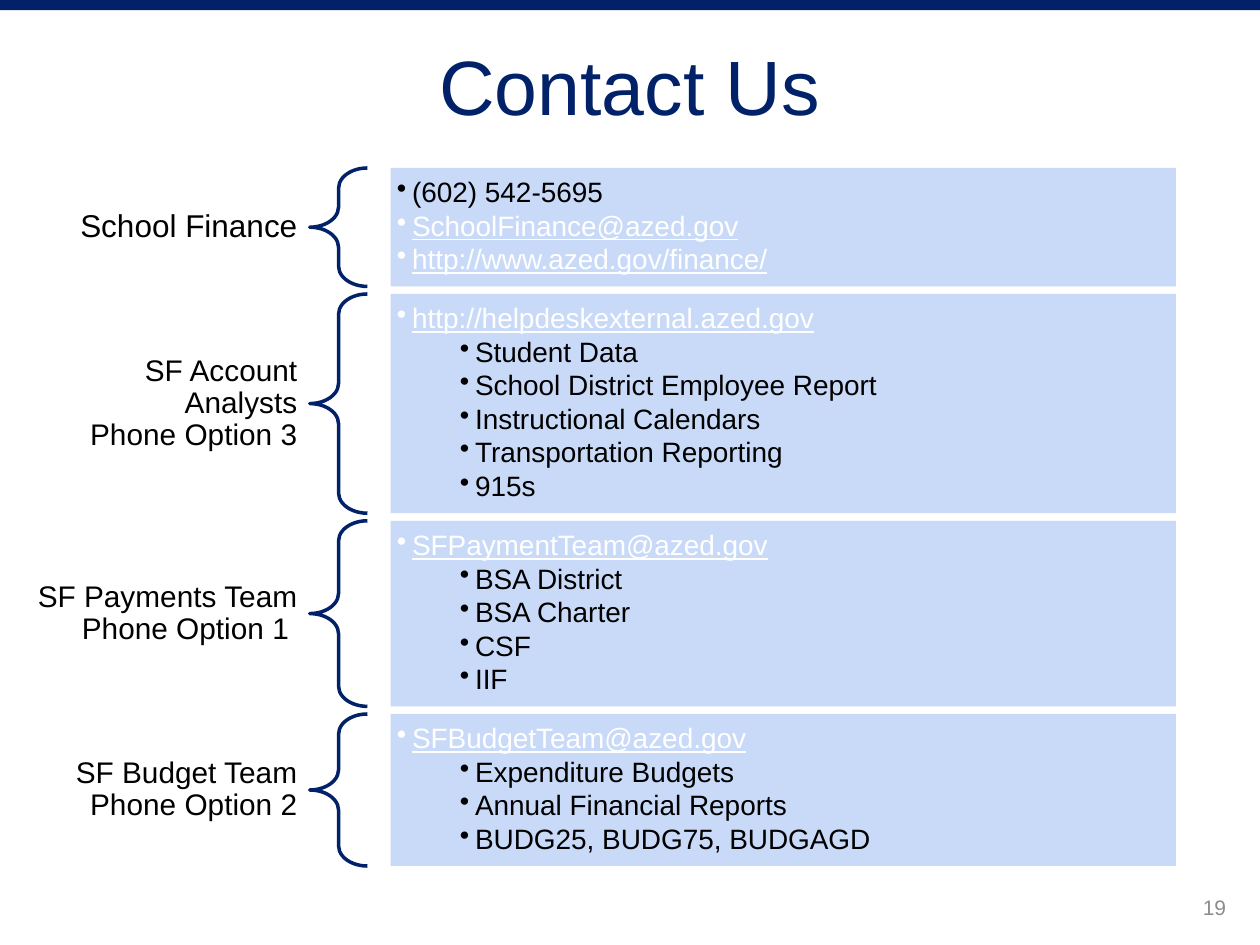
from lxml.etree import SubElement as Sub
from pptx import Presentation
from pptx.dml.color import RGBColor
from pptx.enum.shapes import MSO_SHAPE as Kind
from pptx.enum.text import MSO_ANCHOR as Anchor, PP_ALIGN as Align
from pptx.oxml.ns import qn
from pptx.util import Inches, Pt

WIDE, HIGH = 10, 7.5
NAVY, PALE, BLACK, WHITE, GREY = "012169", "C9DAF8", "000000", "FFFFFF", "8C8C8C"
PAD, GAP = 0.14, 0.06
TEAMS = [
    (["School Finance"], 18, 0.36,
     ["(602) 542-5695", "SchoolFinance@azed.gov", "http://www.azed.gov/finance/"], []),
    (["SF Account Analysts", "Phone Option 3"], 17, 0.69,
     ["http://helpdeskexternal.azed.gov"],
     ["Student Data", "School District Employee Report", "Instructional Calendars",
      "Transportation Reporting", "915s"]),
    (["SF Payments Team", "Phone Option 1 "], 17, 0.36,
     ["SFPaymentTeam@azed.gov"], ["BSA District", "BSA Charter", "CSF", "IIF"]),
    (["SF Budget Team", "Phone Option 2"], 17, 0.36,
     ["SFBudgetTeam@azed.gov"],
     ["Expenditure Budgets", "Annual Financial Reports", "BUDG25, BUDG75, BUDGAGD"]),
]


def tint(code):
    """Turn a hex string into a colour."""
    return RGBColor.from_string(code)


def style(para, size, color, align, line=False):
    """Format the runs of a paragraph."""
    para.alignment = align
    for run in para.runs:
        font = run.font
        font.name, font.size, font.color.rgb = "Arial", Pt(size), tint(color)
        font.underline = line


def shape(slide, kind, box, fill=None, line=None):
    """Place a flat preset shape in a box."""
    item = slide.shapes.add_shape(kind, *map(Inches, box))
    item.shadow.inherit = False
    if fill:
        item.fill.solid()
        item.fill.fore_color.rgb = tint(fill)
    else:
        item.fill.background()
    if line:
        item.line.color.rgb, item.line.width = tint(line), Pt(2)
    else:
        item.line.fill.background()
    return item


def setup(frame, side, edge):
    """Wrap and centre a text frame with the given insets."""
    frame.word_wrap, frame.vertical_anchor = True, Anchor.MIDDLE
    frame.margin_left = frame.margin_right = Inches(side)
    frame.margin_top = frame.margin_bottom = Inches(edge)


def label(slide, box, lines, size, color, align, space=None):
    """Place a text box, one paragraph a line."""
    frame = slide.shapes.add_textbox(*map(Inches, box)).text_frame
    setup(frame, 0.1, 0.04)
    frame.text = "\n".join(lines)
    for para in frame.paragraphs:
        para.line_spacing = space
        style(para, size, color, align)


def bullet(para, left):
    """Hang a round bullet before a paragraph."""
    props = para._p.get_or_add_pPr()
    props.set("marL", str(Inches(left)))
    props.set("indent", str(Inches(-0.12)))
    Sub(props, qn("a:buChar")).set("char", "•")


def panel(slide, box, heads, subs):
    """Fill a pale panel with main and nested bullets."""
    frame = shape(slide, Kind.RECTANGLE, box, PALE).text_frame
    setup(frame, 0.05, 0.05)
    frame.text = "\n".join(heads + subs)
    for spot, para in enumerate(frame.paragraphs):
        nest = spot >= len(heads)
        link = "azed.gov" in para.text
        para.level = 2 if nest else 1
        bullet(para, 0.62 if nest else 0.12)
        para.line_spacing = 0.9
        para.space_before = Pt(1.9 if spot else 0)
        style(para, 16, WHITE if link else BLACK, Align.LEFT, link)


def team(slide, box, names, size, tall, heads, subs):
    """Lay out one team: label, brace and panel."""
    left, top, wide, high = box
    mid = top + (high - tall) / 2
    label(slide, (left, mid, wide / 4, tall), names, size, BLACK, Align.RIGHT, 0.9)
    brace = shape(slide, Kind.LEFT_BRACE, (left + wide / 4, top, wide / 20, high), line=NAVY)
    brace.adjustments[0], brace.adjustments[1] = 0.35, 0.5
    start = wide * 0.32
    panel(slide, (left + start, top, wide - start, high), heads, subs)


def teams(slide, box):
    """Stack the teams, each as high as its lines need."""
    left, top, wide, high = box
    count = sum(len(heads) + len(subs) for *_, heads, subs in TEAMS)
    row = (high - PAD * len(TEAMS) - GAP * (len(TEAMS) - 1)) / count
    for names, size, tall, heads, subs in TEAMS:
        deep = PAD + row * (len(heads) + len(subs))
        team(slide, (left, top, wide, deep), names, size, tall, heads, subs)
        top += deep + GAP


def main():
    """Build and save the contact slide."""
    deck = Presentation()
    deck.slide_width, deck.slide_height = Inches(WIDE), Inches(HIGH)
    slide = deck.slides.add_slide(deck.slide_layouts[6])
    shape(slide, Kind.RECTANGLE, (0, 0, WIDE, 0.08), "022169")
    label(slide, (7.5, 7, 2.33, 0.4), ["19"], 12, GREY, Align.RIGHT)
    label(slide, (WIDE / 30, 0.17, WIDE * 28 / 30, 1), ["Contact Us"], 44, NAVY, Align.CENTER)
    teams(slide, (WIDE / 60, HIGH * 8 / 45, WIDE * 55 / 60, 5.54))
    deck.save("out.pptx")


if __name__ == "__main__":
    main()
